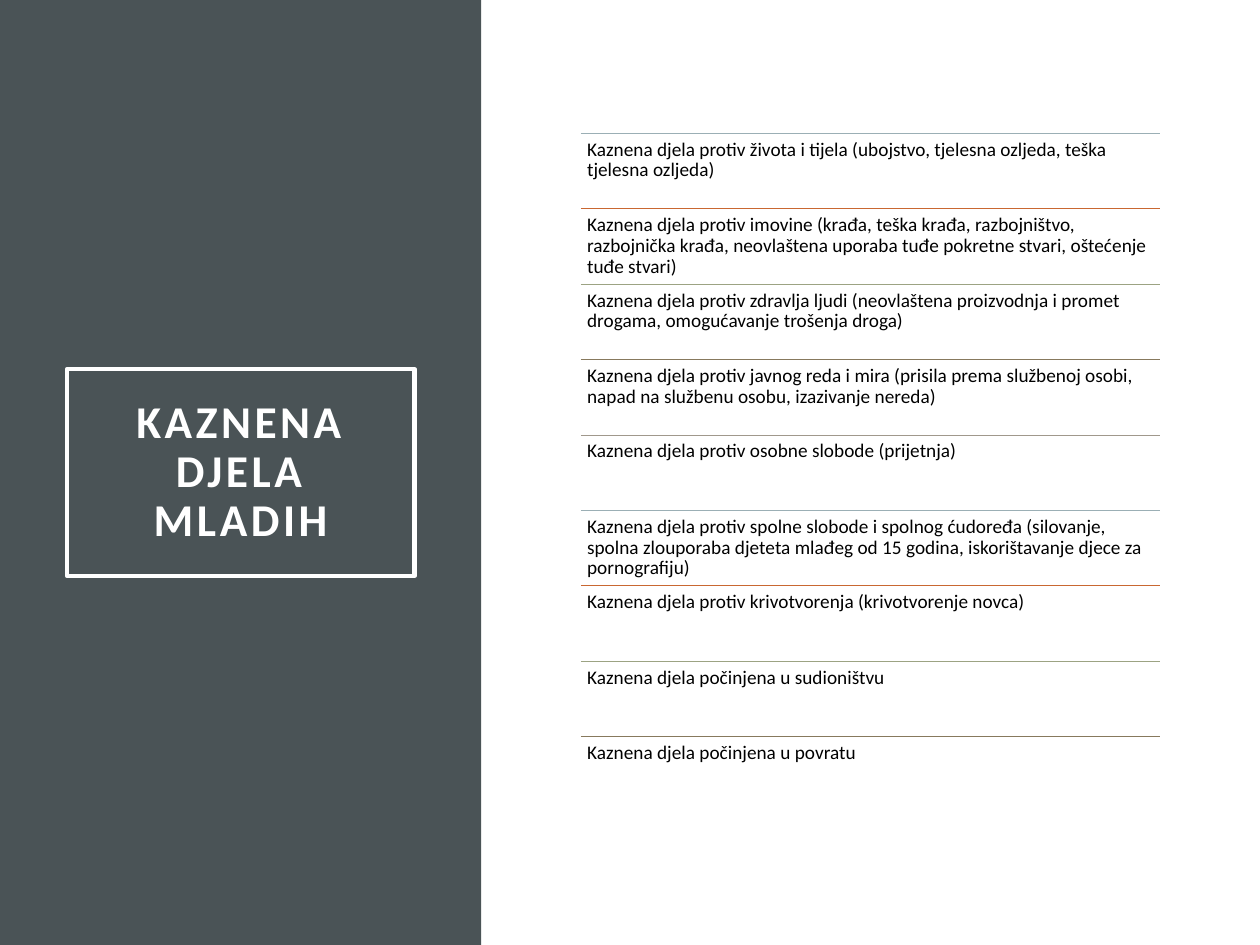
import itertools

import lxml.etree
import pptx
import pptx.dml.color
import pptx.enum.shapes
import pptx.enum.text
import pptx.oxml.ns
import pptx.util

Pt = pptx.util.Pt

COLORS = {
    "panel": "4A5356",
    "white": "FFFFFF",
    "text": "000000",
    "blue": "9BAFB5",
    "orange": "C96731",
    "green": "9CA383",
    "brown": "87795D",
    "taupe": "A0988C",
}
RULE_COLORS = ["blue", "orange", "green", "brown", "taupe"]

TITLE = "KAZNENA DJELA MLADIH"
OFFENCES = [
    "Kaznena djela protiv života i tijela (ubojstvo, tjelesna ozljeda, teška tjelesna ozljeda)",
    "Kaznena djela protiv imovine (krađa, teška krađa, razbojništvo, razbojnička krađa, "
    "neovlaštena uporaba tuđe pokretne stvari, oštećenje tuđe stvari)",
    "Kaznena djela protiv zdravlja ljudi (neovlaštena proizvodnja i promet drogama, "
    "omogućavanje trošenja droga)",
    "Kaznena djela protiv javnog reda i mira (prisila prema službenoj osobi, "
    "napad na službenu osobu, izazivanje nereda)",
    "Kaznena djela protiv osobne slobode (prijetnja)",
    "Kaznena djela protiv spolne slobode i spolnog ćudoređa (silovanje, spolna zlouporaba "
    "djeteta mlađeg od 15 godina, iskorištavanje djece za pornografiju)",
    "Kaznena djela protiv krivotvorenja (krivotvorenje novca)",
    "Kaznena djela počinjena u sudioništvu",
    "Kaznena djela počinjena u povratu",
]

LIST_LEFT, LIST_TOP, LIST_WIDTH, ROW_HEIGHT = 331.9, 76.2, 331.2, 43.1


def rgb(name):
    return pptx.dml.color.RGBColor.from_string(COLORS[name])


def set_attributes(target, values):
    for name, value in values.items():
        setattr(target, name, value)


def write_text(shape, text, margin, color, frame_format, paragraph_format, font_format):
    frame = shape.text_frame
    frame.text = text
    margins = {f"margin_{side}": Pt(margin) for side in ("left", "top", "right", "bottom")}
    set_attributes(frame, {"word_wrap": True, **margins, **frame_format})
    paragraph = frame.paragraphs[0]
    set_attributes(paragraph, {"line_spacing": 0.9, "space_before": Pt(0), **paragraph_format})
    font = paragraph.runs[0].font
    set_attributes(font, {"name": "Calibri", **font_format})
    font.color.rgb = rgb(color)


def add_panel(slide):
    panel = slide.shapes.add_shape(
        pptx.enum.shapes.MSO_SHAPE.RECTANGLE, Pt(0), Pt(0), Pt(275), Pt(540))
    panel.shadow.inherit = False
    panel.fill.solid()
    panel.fill.fore_color.rgb = rgb("panel")
    panel.line.fill.background()


def format_title(slide):
    title = slide.shapes.title
    title.element.getparent().append(title.element)  # in front of the panel
    set_attributes(title, {"left": Pt(38.2), "top": Pt(211), "width": Pt(198.7), "height": Pt(118)})
    title.line.color.rgb = rgb("white")
    title.line.width = Pt(2.5)
    write_text(
        title, TITLE, 14.4, "white",
        {"vertical_anchor": pptx.enum.text.MSO_ANCHOR.MIDDLE,
         "auto_size": pptx.enum.text.MSO_AUTO_SIZE.NONE},
        {"alignment": pptx.enum.text.PP_ALIGN.CENTER},
        {"size": Pt(26), "bold": True})
    run = title.text_frame.paragraphs[0].runs[0]
    run.font._element.set("spc", "200")


def add_rule(group, top, color):
    rule = group.shapes.add_connector(
        pptx.enum.shapes.MSO_CONNECTOR.STRAIGHT,
        Pt(LIST_LEFT), Pt(top), Pt(LIST_LEFT + LIST_WIDTH), Pt(top))
    rule.line.color.rgb = rgb(color)
    rule.line.width = Pt(0.5)
    properties = rule.element.find(pptx.oxml.ns.qn("p:spPr"))
    lxml.etree.SubElement(properties, pptx.oxml.ns.qn("a:effectLst"))


def add_offence(group, top, text):
    box = group.shapes.add_textbox(Pt(LIST_LEFT), Pt(top), Pt(LIST_WIDTH), Pt(ROW_HEIGHT))
    write_text(box, text, 3.6, "text", {}, {}, {"size": Pt(11)})


def add_offence_list(slide):
    group = slide.shapes.add_group_shape()
    for row, (text, color) in enumerate(zip(OFFENCES, itertools.cycle(RULE_COLORS))):
        top = LIST_TOP + row * ROW_HEIGHT
        add_rule(group, top, color)
        add_offence(group, top, text)


def main():
    presentation = pptx.Presentation()
    presentation.slide_width = Pt(720)
    presentation.slide_height = Pt(540)
    slide = presentation.slides.add_slide(presentation.slide_layouts.get_by_name("Title Only"))
    add_panel(slide)
    format_title(slide)
    add_offence_list(slide)
    presentation.save("out.pptx")


if __name__ == "__main__":
    main()
